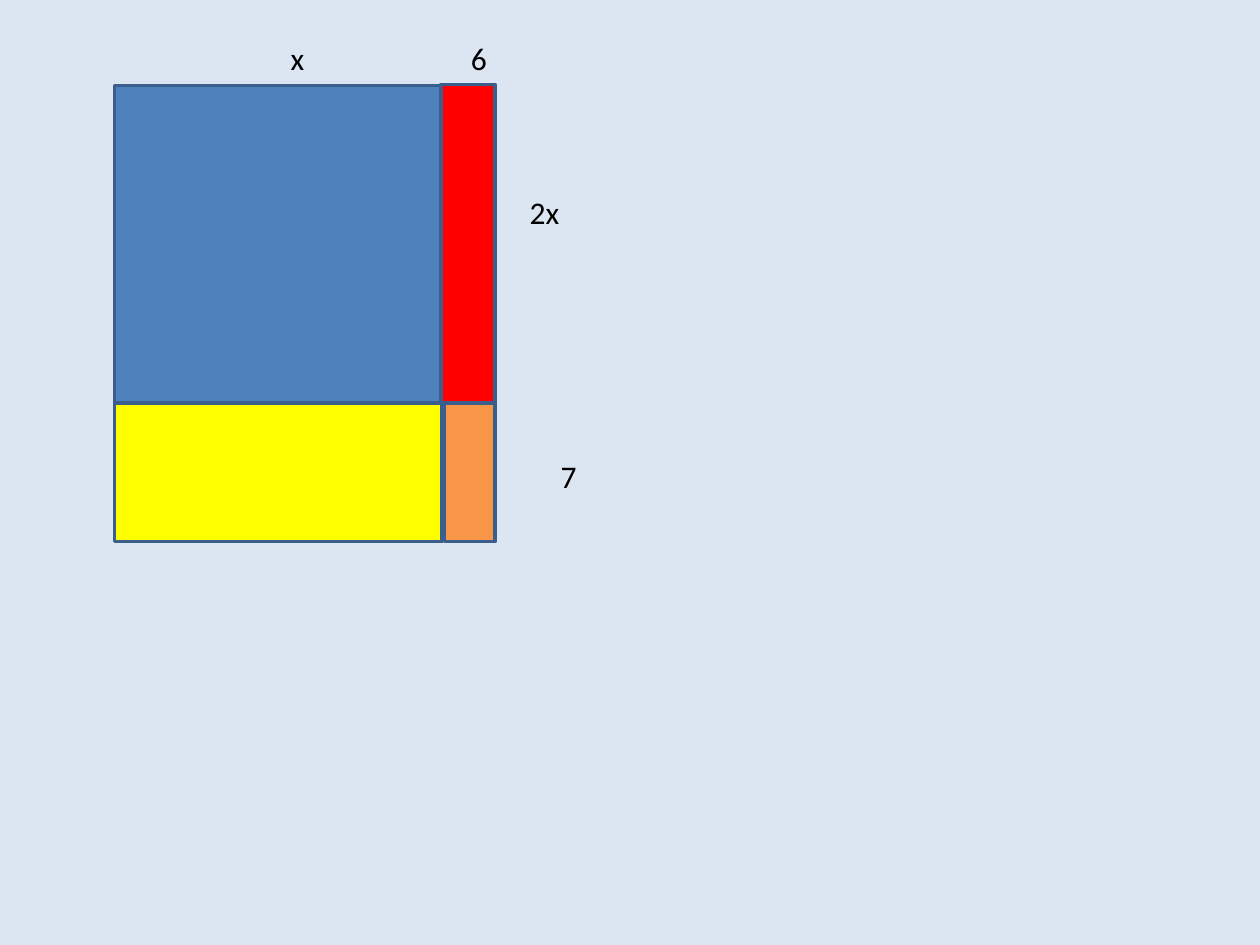
"""Area model of (x + 6)(2x + 7)."""
from dataclasses import dataclass

from pptx import Presentation
from pptx.dml.color import RGBColor
from pptx.enum.shapes import MSO_SHAPE
from pptx.enum.text import MSO_ANCHOR, PP_ALIGN
from pptx.slide import Slide
from pptx.util import Inches, Pt


@dataclass(frozen=True)
class Theme:
    """Colours, type and line sizes."""
    bg: str = "DCE6F2"
    blue: str = "4F81BD"
    red: str = "FF0000"
    yellow: str = "FFFF00"
    orange: str = "F79646"
    outline: str = "3A5F8C"
    ink: str = "000000"
    font: str = "Calibri"
    size: int = 18
    line: int = 2


@dataclass(frozen=True)
class Tile:
    """One partial product, in inches."""
    x: float
    y: float
    w: float
    h: float
    fill: str


@dataclass(frozen=True)
class Label:
    """One side length, in inches."""
    x: float
    y: float
    text: str
    anchor: MSO_ANCHOR


T = Theme()
LABEL_W, LABEL_H = 1.64, 0.71
LEFT, SPLIT, WIDE, LOW = 0.91, 3.2, 2.6, 1.1

TILES = (
    Tile(LEFT, 0.68, WIDE, 2.52, T.blue),
    Tile(3.5, 0.67, 0.43, 2.53, T.red),
    Tile(LEFT, SPLIT, WIDE, LOW, T.yellow),
    Tile(3.53, SPLIT, 0.4, LOW, T.orange),
)
LABELS = (
    Label(1.54, 0.26, "x", MSO_ANCHOR.TOP),
    Label(2.98, 0.26, "6", MSO_ANCHOR.TOP),
    Label(3.53, 1.17, "2x ", MSO_ANCHOR.BOTTOM),
    Label(3.72, 3.27, "7 ", MSO_ANCHOR.BOTTOM),
)


def add_tile(s: Slide, tile: Tile) -> None:
    """Draw one outlined rectangle."""
    sp = s.shapes.add_shape(MSO_SHAPE.RECTANGLE, Inches(tile.x), Inches(tile.y),
                            Inches(tile.w), Inches(tile.h))
    sp.shadow.inherit = False
    sp.fill.solid()
    sp.fill.fore_color.rgb = RGBColor.from_string(tile.fill)
    sp.line.color.rgb = RGBColor.from_string(T.outline)
    sp.line.width = Pt(T.line)


def add_label(s: Slide, label: Label) -> None:
    """Write one centred side length."""
    sp = s.shapes.add_textbox(Inches(label.x), Inches(label.y),
                              Inches(LABEL_W), Inches(LABEL_H))
    tf = sp.text_frame
    tf.word_wrap = True
    tf.vertical_anchor = label.anchor
    p = tf.paragraphs[0]
    p.alignment = PP_ALIGN.CENTER
    r = p.add_run()
    r.text = label.text
    r.font.name = T.font
    r.font.size = Pt(T.size)
    r.font.color.rgb = RGBColor.from_string(T.ink)


def main() -> None:
    """Build and save the slide."""
    prs = Presentation()
    prs.slide_width, prs.slide_height = Inches(10), Inches(7.5)
    s = prs.slides.add_slide(prs.slide_layouts[6])
    s.background.fill.solid()
    s.background.fill.fore_color.rgb = RGBColor.from_string(T.bg)
    for tile in TILES:
        add_tile(s, tile)
    for label in LABELS:
        add_label(s, label)
    prs.save("out.pptx")


if __name__ == "__main__":
    main()
